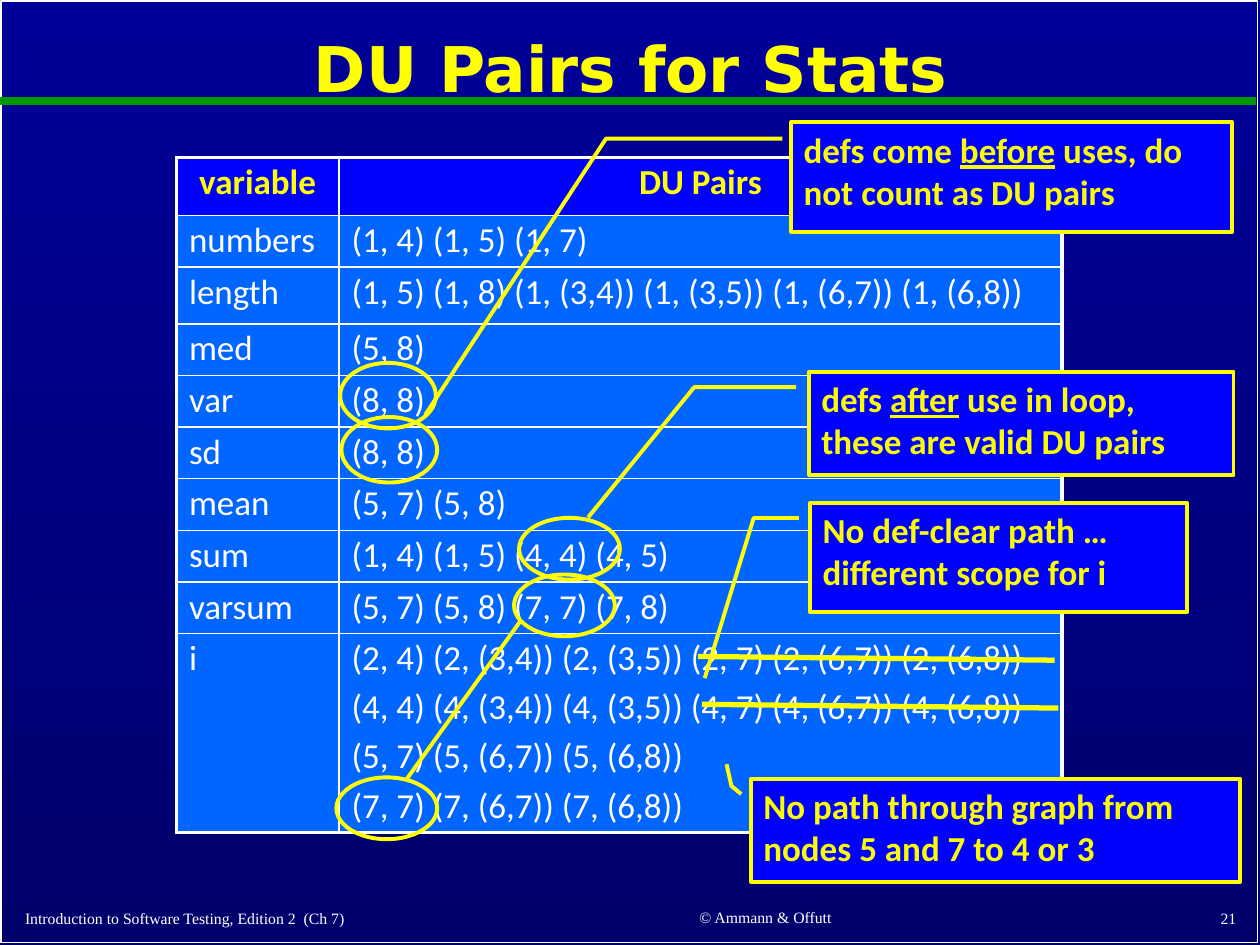
from lxml import etree
from pptx import Presentation
from pptx.dml.color import RGBColor
from pptx.enum.shapes import MSO_CONNECTOR as CONN, MSO_SHAPE as SHAPE
from pptx.enum.text import MSO_ANCHOR as ANCHOR, MSO_AUTO_SIZE as AUTO, PP_ALIGN as ALIGN
from pptx.oxml.ns import qn
from pptx.util import Inches, Pt

NAVY, NAVY_DARK, BLUE, SKY = "000099", "00006D", "0000FF", "0066FF"
WHITE, YELLOW, GOLD, GREEN = "FFFFFF", "FFFF00", "FAFD00", "009900"


def rgb(value):
    return RGBColor.from_string(value)


class Deck:
    font, size = "Calibri", 20

    def __init__(self, prs):
        self.s = prs.slides.add_slide(prs.slide_layouts[5])

    def background(self, top, bottom):
        fill = self.s.background.fill
        fill.gradient()
        fill.gradient_angle = 270
        for stop, (place, color) in zip(fill.gradient_stops, ((0, top), (1, bottom))):
            stop.position = place
            stop.color.rgb = rgb(color)

    def style(self, r, color, bold=False, size=size, font=font):
        r.font.name, r.font.size, r.font.bold = font, Pt(size), bold
        r.font.color.rgb = rgb(color)

    def title(self, text, *box):
        sp = self.s.shapes.title
        sp.left, sp.top, sp.width, sp.height = map(Inches, box)
        tf = sp.text_frame
        tf.text = text
        tf.auto_size, tf.vertical_anchor = AUTO.NONE, ANCHOR.MIDDLE
        p = tf.paragraphs[0]
        p.alignment, p.line_spacing = ALIGN.CENTER, 0.9
        self.style(p.runs[0], YELLOW, True, 36, "DejaVu Sans")

    def footer(self, text, align, *box):
        tf = self.s.shapes.add_textbox(*map(Inches, box)).text_frame
        tf.text = text
        tf.word_wrap, tf.vertical_anchor = True, ANCHOR.MIDDLE
        p = tf.paragraphs[0]
        p.alignment = align
        self.style(p.runs[0], WHITE, size=9, font="Times New Roman")

    def shape(self, kind, box, line, weight, fill=None):
        sp = self.s.shapes.add_shape(kind, *map(Inches, box))
        sp.shadow.inherit = False
        sp.line.color.rgb, sp.line.width = rgb(line), Pt(weight)
        if fill:
            sp.fill.solid()
            sp.fill.fore_color.rgb = rgb(fill)
        else:
            sp.fill.background()
        return sp

    def line(self, x1, y1, x2, y2, color=YELLOW, weight=2.25):
        cx = self.s.shapes.add_connector(CONN.STRAIGHT, *map(Inches, (x1, y1, x2, y2)))
        cx.line.color.rgb, cx.line.width = rgb(color), Pt(weight)
        etree.SubElement(cx._element.spPr, qn("a:effectLst"))

    def ring(self, x, y, w, h):
        self.shape(SHAPE.OVAL, (x, y, w, h), YELLOW, 2.25)

    def callout(self, box, pointer, text, underlined=None):
        sp = self.shape(SHAPE.LINE_CALLOUT_2, box, YELLOW, 2.25, BLUE)
        for i, value in enumerate(pointer):
            sp.adjustments[i] = value
        tf = sp.text_frame
        tf.text = text
        tf.word_wrap, tf.vertical_anchor = True, ANCHOR.TOP
        for p in tf.paragraphs:
            if underlined:
                before, after = p.text.split(underlined)
                p.text = before
                for part in (underlined, after):
                    p.add_run().text = part
            p.alignment = ALIGN.LEFT
            for r in p.runs:
                self.style(r, GOLD, True)
                r.font.underline = r.text == underlined

    def borders(self, cell, **weights):
        tcPr = cell._tc.get_or_add_tcPr()
        for i, (side, weight) in enumerate(weights.items()):
            ln = etree.Element(qn("a:ln" + side), w=str(Pt(weight)))
            fill = etree.SubElement(ln, qn("a:solidFill"))
            etree.SubElement(fill, qn("a:srgbClr"), val=WHITE)
            tcPr.insert(i, ln)

    def table(self, x, y, widths, heights, rows):
        box = map(Inches, (x, y, sum(widths), sum(heights)))
        table = self.s.shapes.add_table(len(rows), len(widths), *box).table
        table.horz_banding = False
        for column, width in zip(table.columns, widths):
            column.width = Inches(width)
        last_row, last_col = len(rows) - 1, len(widths) - 1
        for i, (row, height) in enumerate(zip(rows, heights)):
            table.rows[i].height = Inches(height)
            head = i == 0
            for j, text in enumerate(row):
                cell = table.cell(i, j)
                cell.text = text
                cell.fill.solid()
                cell.fill.fore_color.rgb = rgb(BLUE if head else SKY)
                self.borders(cell, L=2.25 if j == 0 else 1, R=2.25 if j == last_col else 1,
                             T=2.25 if head else 1, B=2.25 if i == last_row else 1)
                for p in cell.text_frame.paragraphs:
                    p.alignment = ALIGN.CENTER if head else ALIGN.LEFT
                    p.line_spacing, p.space_before = 0.9, Pt(6)
                    self.style(p.runs[0], YELLOW if head else WHITE, head)


def main():
    prs = Presentation()
    prs.slide_width, prs.slide_height = Inches(10), Inches(7.5)
    deck = Deck(prs)
    deck.background(NAVY, NAVY_DARK)
    deck.shape(SHAPE.RECTANGLE, (0.01, 0.01, 9.97, 7.47), WHITE, 1)
    deck.line(0, 0.8, 9.97, 0.8, GREEN, 4.5)
    deck.title("DU Pairs for Stats", 0.08, 0.11, 9.85, 0.92)
    deck.footer("Introduction to Software Testing, Edition 2  (Ch 7)", ALIGN.LEFT, 0.1, 7.16, 4.11, 0.26)
    deck.footer("© Ammann & Offutt", ALIGN.CENTER, 4.49, 7.15, 3.17, 0.26)
    deck.footer("21", ALIGN.RIGHT, 7.83, 7.15, 2.08, 0.27)

    pairs = [
        ("variable", "DU Pairs"),
        ("numbers", "(1, 4) (1, 5) (1, 7)"),
        ("length", "(1, 5) (1, 8) (1, (3,4)) (1, (3,5)) (1, (6,7)) (1, (6,8))"),
        ("med", "(5, 8)"),
        ("var", "(8, 8)"),
        ("sd", "(8, 8)"),
        ("mean", "(5, 7) (5, 8)"),
        ("sum", "(1, 4) (1, 5) (4, 4) (4, 5)"),
        ("varsum", "(5, 7) (5, 8) (7, 7) (7, 8)"),
        ("i", "(2, 4) (2, (3,4)) (2, (3,5)) (2, 7) (2, (6,7)) (2, (6,8))\n"
              "(4, 4) (4, (3,4)) (4, (3,5)) (4, 7) (4, (6,7)) (4, (6,8))\n"
              "(5, 7) (5, (6,7)) (5, (6,8))\n"
              "(7, 7) (7, (6,7)) (7, (6,8))"),
    ]
    heights = [0.46, 0.41, 0.45] + [0.41] * 6 + [1.58]
    deck.table(1.4, 1.25, (1.29, 5.74), heights, pairs)

    deck.line(5.54, 5.21, 8.37, 5.24, weight=3)
    deck.line(5.57, 5.59, 8.4, 5.62, weight=3)
    deck.callout((6.43, 3.99, 2.99, 0.87), (0.14, -0.03, 0.14, -0.15, 1.6, -0.28),
                 "No def-clear path …\ndifferent scope for i")
    deck.callout((5.96, 6.18, 3.88, 0.82), (0.15, -0.02, 0.07, -0.04, -0.14, -0.05),
                 "No path through graph from nodes 5 and 7 to 4 or 3")
    deck.callout((6.28, 0.97, 3.5, 0.87), (0.15, -0.02, 0.15, -0.42, 2.67, -0.83),
                 "defs come before uses, do not count as DU pairs", "before")
    deck.ring(2.71, 3.31, 0.76, 0.52)
    deck.ring(2.7, 2.88, 0.76, 0.52)
    deck.callout((6.42, 2.95, 3.37, 0.82), (0.15, -0.03, 0.15, -0.27, 1.41, -0.52),
                 "defs after use in loop, these are valid DU pairs", "after")
    for x, y in ((4.12, 4.11), (2.67, 6.17), (4.08, 4.56)):
        deck.ring(x, y, 0.8, 0.49)
    deck.line(3.23, 6.18, 4.13, 4.93)
    prs.save("out.pptx")


if __name__ == "__main__":
    main()
